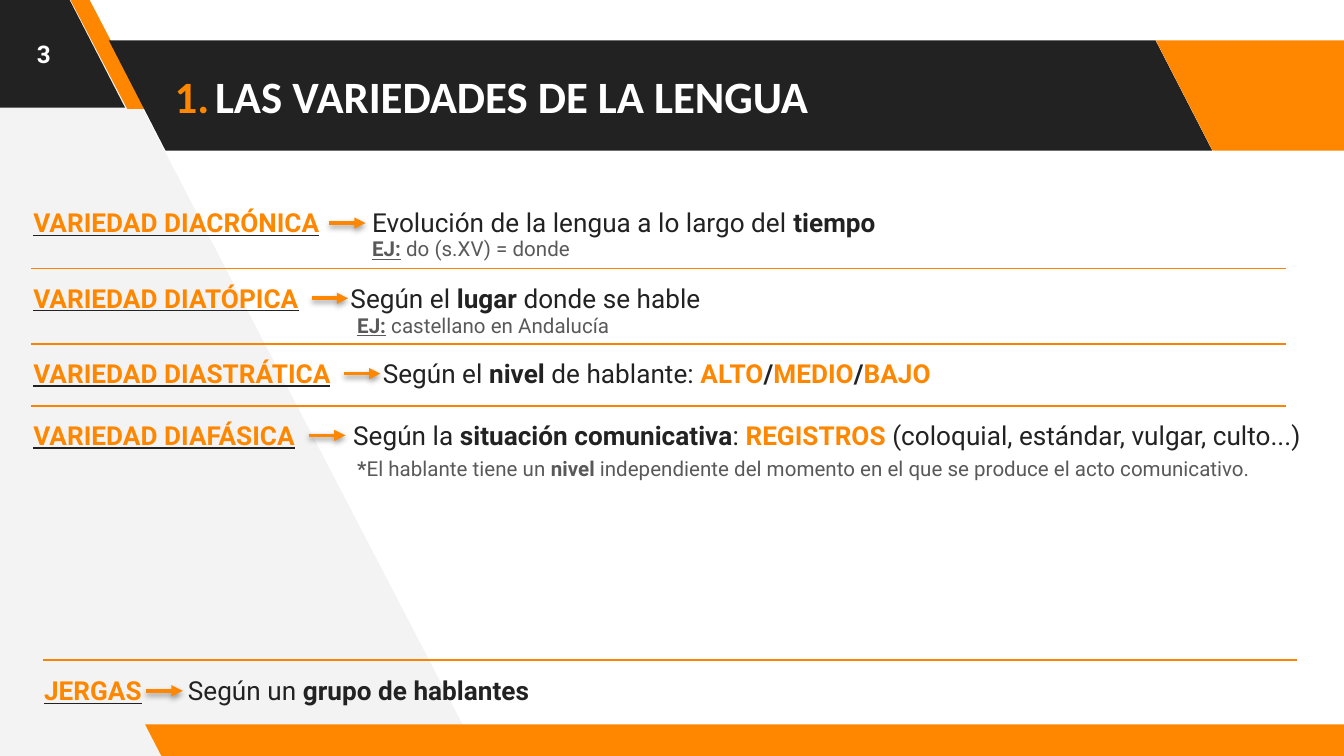
import dataclasses

import lxml.etree
import pptx
import pptx.dml.color
import pptx.enum.shapes
import pptx.enum.text
import pptx.oxml.ns
import pptx.util

Inches = pptx.util.Inches
Pt = pptx.util.Pt
PARALLELOGRAM = pptx.enum.shapes.MSO_SHAPE.PARALLELOGRAM
STRAIGHT = pptx.enum.shapes.MSO_CONNECTOR.STRAIGHT
ALIGN = pptx.enum.text.PP_ALIGN
MIDDLE = pptx.enum.text.MSO_ANCHOR.MIDDLE


@dataclasses.dataclass(frozen=True)
class Theme:
    orange: str = "FF8700"
    rule: str = "F98400"
    dark: str = "222222"
    grey: str = "595959"
    pale: str = "F3F3F3"
    white: str = "FFFFFF"
    shadow: str = "000000"
    title_font: str = "Calibri"
    body_font: str = "Roboto"
    title_size: float = 24
    number_size: float = 13
    row_size: float = 14
    note_size: float = 11


THEME = Theme()

# Span styles: colour, bold, underlined
TERM = (THEME.orange, True, True)
ACCENT = (THEME.orange, True, False)
PLAIN = (THEME.dark, False, False)
STRONG = (THEME.dark, True, False)
NOTE = (THEME.grey, False, False)
NOTE_STRONG = (THEME.grey, True, False)
NOTE_LABEL = (THEME.grey, True, True)


def add_xml(parent, tag, **attributes):
    return lxml.etree.SubElement(parent, pptx.oxml.ns.qn(tag), attributes)


def rgb(colour):
    return pptx.dml.color.RGBColor.from_string(colour)


class SlideBuilder:
    def __init__(self, page, theme):
        self.page = page
        self.theme = theme

    def paint(self, shape, colour):
        shape.shadow.inherit = False
        shape.fill.solid()
        shape.fill.fore_color.rgb = rgb(colour)
        shape.line.fill.background()

    def polygon(self, points, colour):
        corners = [(Inches(x), Inches(y)) for x, y in points]
        builder = self.page.shapes.build_freeform(*corners[0])
        builder.add_line_segments(corners[1:], close=True)
        self.paint(builder.convert_to_shape(), colour)

    def band(self, left, top, width, height, colour, slant=0.515):
        """Add a parallelogram that leans to the left."""
        shape = self.page.shapes.add_shape(
            PARALLELOGRAM, Inches(left), Inches(top), Inches(width), Inches(height))
        shape.adjustments[0] = slant
        shape._element.spPr.find(pptx.oxml.ns.qn("a:xfrm")).set("flipH", "1")
        self.paint(shape, colour)

    def set_font(self, para, name, size, colour=None, bold=None):
        para.font.name = name
        para.font.size = Pt(size)
        para.font.bold = bold
        if colour:
            para.font.color.rgb = rgb(colour)

    def set_frame(self, frame):
        """Centre the text vertically inside even margins."""
        frame.word_wrap = True
        frame.vertical_anchor = MIDDLE
        frame.margin_left = frame.margin_right = Inches(0.1)
        frame.margin_top = frame.margin_bottom = Inches(0.1)

    def title(self, text, left, top, width, height):
        box = self.page.shapes.title
        self.page.shapes._spTree.append(box._element)  # in front of the bands
        box.left, box.top = Inches(left), Inches(top)
        box.width, box.height = Inches(width), Inches(height)
        self.set_frame(box.text_frame)
        box.text_frame.auto_size = pptx.enum.text.MSO_AUTO_SIZE.NONE
        para = box.text_frame.paragraphs[0]
        para.text = text
        para.alignment = ALIGN.LEFT
        properties = para._p.get_or_add_pPr()
        properties.set("marL", str(Inches(0.3)))
        properties.set("indent", str(-Inches(0.3)))
        add_xml(add_xml(properties, "a:buClr"), "a:srgbClr", val=self.theme.orange)
        add_xml(properties, "a:buFont", typeface=self.theme.title_font)
        add_xml(properties, "a:buAutoNum", type="arabicPeriod")
        self.set_font(para, self.theme.title_font, self.theme.title_size,
                      self.theme.white, True)

    def page_number(self, text, width, height):
        box = self.page.shapes.add_textbox(0, 0, Inches(width), Inches(height))
        self.set_frame(box.text_frame)
        para = box.text_frame.paragraphs[0]
        para.text = text
        para.alignment = ALIGN.CENTER
        self.set_font(para, self.theme.body_font, self.theme.number_size,
                      self.theme.white, True)

    def text(self, left, top, width, height, size, spans, tab=None):
        """Add one line of styled spans; tab is measured from the text's left edge."""
        box = self.page.shapes.add_textbox(
            Inches(left), Inches(top), Inches(width), Inches(height))
        box.text_frame.word_wrap = True
        box.text_frame.auto_size = pptx.enum.text.MSO_AUTO_SIZE.SHAPE_TO_FIT_TEXT
        para = box.text_frame.paragraphs[0]
        if tab:
            stops = add_xml(para._p.get_or_add_pPr(), "a:tabLst")
            add_xml(stops, "a:tab", pos=str(Inches(tab)), algn="l")
        self.set_font(para, self.theme.body_font, size)
        for content, (colour, bold, underlined) in spans:
            span = para.add_run()
            span.text = content
            span.font.color.rgb = rgb(colour)
            span.font.bold = bold
            span.font.underline = underlined
            if colour == self.theme.orange and underlined:
                fill = add_xml(add_xml(span._r.get_or_add_rPr(), "a:uFill"), "a:solidFill")
                add_xml(fill, "a:srgbClr", val=self.theme.dark)

    def line(self, left, right, y, colour, weight):
        """Add a level line and return it with its empty effect list."""
        connector = self.page.shapes.add_connector(
            STRAIGHT, Inches(left), Inches(y), Inches(right), Inches(y))
        connector.line.color.rgb = rgb(colour)
        connector.line.width = Pt(weight)
        return connector, add_xml(connector._element.spPr, "a:effectLst")

    def divider(self, left, right, y):
        self.line(left, right, y, self.theme.rule, 0.75)

    def arrow(self, left, y):
        connector, effects = self.line(left, left + 0.27, y, self.theme.orange, 2)
        add_xml(connector.line._get_or_add_ln(), "a:tailEnd", type="triangle")
        shadow = add_xml(effects, "a:outerShdw", blurRad=str(Pt(3.1)), dist=str(Pt(1.6)),
                         dir="5400000", rotWithShape="0")
        colour = add_xml(shadow, "a:srgbClr", val=self.theme.shadow)
        add_xml(colour, "a:alpha", val="38000")

    def row(self, term, left, top, width, arrow_left, meaning_left, spans):
        """Add a term, its arrow and its meaning on one line."""
        self.text(left, top, width, 0.34, self.theme.row_size,
                  [(term, TERM), ("\t", PLAIN), *spans], meaning_left - left - 0.1)
        self.arrow(arrow_left, top + 0.17)

    def note(self, left, top, width, spans):
        self.text(left, top, width, 0.29, self.theme.note_size, spans)


ROWS = [
    ("VARIEDAD DIACRÓNICA", 0.15, 1.49, 6.53, 2.45, 2.77,
     [("Evolución de la lengua a lo largo del ", PLAIN), ("tiempo", STRONG)]),
    ("VARIEDAD DIATÓPICA", 0.15, 2.05, 5.37, 2.32, 2.61,
     [("Según el ", PLAIN), ("lugar", STRONG), (" donde se hable", PLAIN)]),
    ("VARIEDAD DIASTRÁTICA", 0.15, 2.61, 6.97, 2.56, 2.85,
     [("Según el ", PLAIN), ("nivel", STRONG), (" de hablante: ", PLAIN),
      ("ALTO", ACCENT), ("/", STRONG), ("MEDIO", ACCENT), ("/", STRONG), ("BAJO", ACCENT)]),
    ("VARIEDAD DIAFÁSICA", 0.15, 3.07, 9.76, 2.3, 2.63,
     [("Según la ", PLAIN), ("situación comunicativa", STRONG), (": ", PLAIN),
      ("REGISTROS", ACCENT), (" (coloquial, estándar, vulgar, culto...)", PLAIN)]),
    ("JERGAS", 0.23, 4.97, 3.84, 1.09, 1.4,
     [("Según un ", PLAIN), ("grupo de hablantes", STRONG)]),
]
NOTES = [
    (2.67, 1.71, 1.69, [("EJ:", NOTE_LABEL), (" do (s.XV) = donde", NOTE)]),
    (2.56, 2.28, 2.1, [("EJ:", NOTE_LABEL), (" castellano en Andalucía", NOTE)]),
    (2.56, 3.34, 6.87,
     [("*", NOTE_STRONG), ("El hablante tiene un ", NOTE), ("nivel", NOTE_STRONG),
      (" independiente del momento en el que se produce el acto comunicativo.", NOTE)]),
]
DIVIDERS = [(0.23, 9.57, 2), (0.23, 9.57, 2.56), (0.23, 9.57, 3.02), (0.32, 9.65, 4.91)]


def main():
    deck = pptx.Presentation()
    deck.slide_width = Inches(10)
    deck.slide_height = deck.slide_width * 9 // 16
    page = deck.slides.add_slide(deck.slide_layouts[5])
    slide = SlideBuilder(page, THEME)

    slide.polygon([(3.56, 5.62), (0.62, -0.04), (-0.06, -0.04), (-0.02, 5.66)], THEME.pale)
    slide.band(-0.99, -0.02, 1.92, 0.82, THEME.dark)
    slide.band(0.52, -0.01, 0.57, 0.82, THEME.orange, slant=0.75)
    slide.band(0.81, 0.3, 8.21, 0.82, THEME.dark)
    slide.band(8.6, 0.3, 1.92, 0.82, THEME.orange)
    slide.band(1.08, 5.39, 9.15, 0.25, THEME.orange)
    slide.title("LAS VARIEDADES DE LA LENGUA", 1.2, 0.3, 8.28, 0.82)
    slide.page_number("3", 0.65, 0.8)

    for row in ROWS:
        slide.row(*row)
    for note in NOTES:
        slide.note(*note)
    for divider in DIVIDERS:
        slide.divider(*divider)
    deck.save("out.pptx")


if __name__ == "__main__":
    main()
